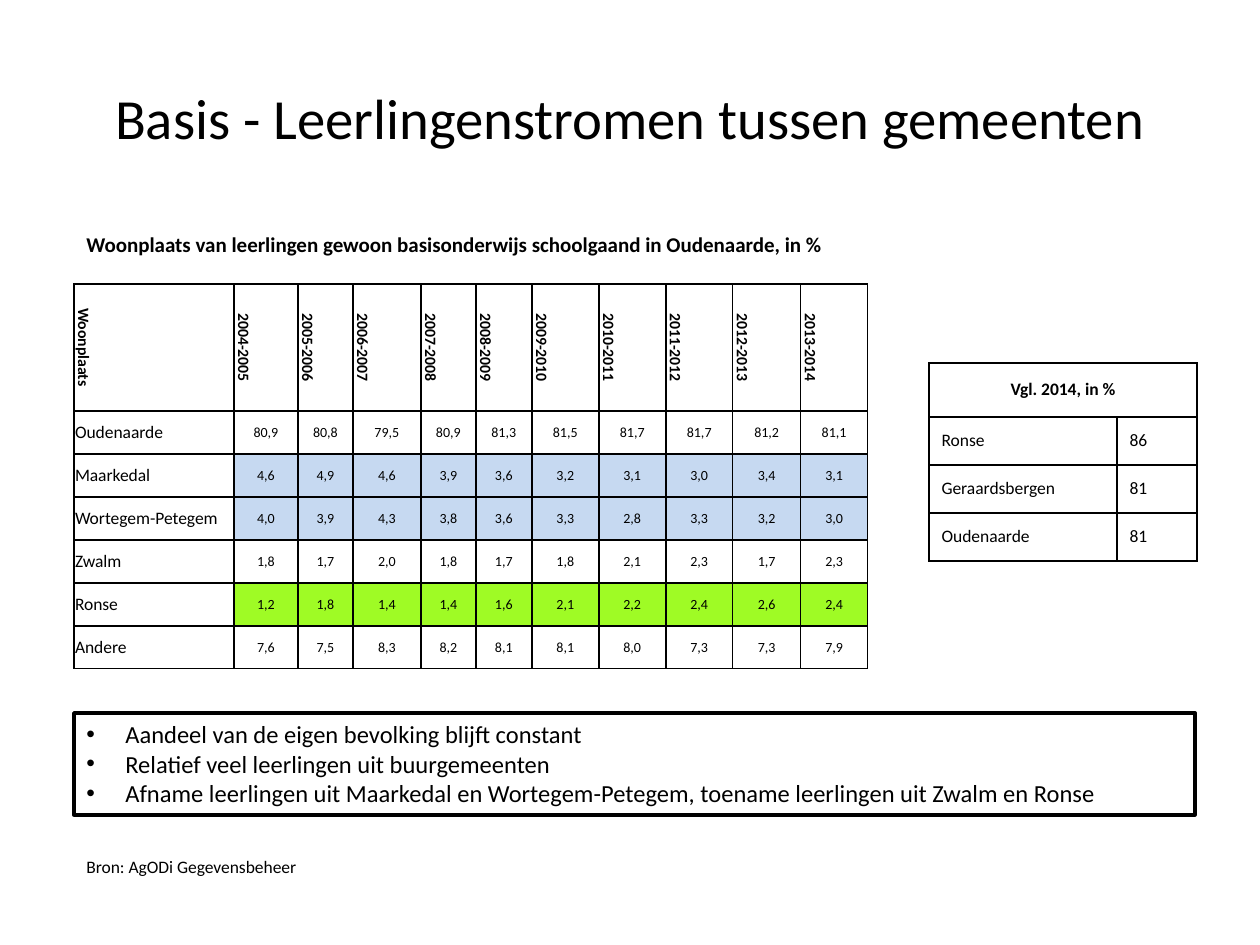
from lxml import etree
from pptx import Presentation
from pptx.dml.color import RGBColor
from pptx.enum.shapes import MSO_SHAPE
from pptx.enum.text import MSO_ANCHOR, PP_ALIGN
from pptx.oxml.ns import qn
from pptx.util import Pt

SCALE = 914400 / 126
LEFT, MID = PP_ALIGN.LEFT, PP_ALIGN.CENTER
CENTRE, TOP = MSO_ANCHOR.MIDDLE, MSO_ANCHOR.TOP
RECT = MSO_SHAPE.RECTANGLE
HEX = {"ink": "000000", "paper": "FFFFFF", "blue": "C6D9F1", "green": "9FFB25"}

YEARS = [f"{year}-{year + 1}" for year in range(2004, 2014)]
SHARES = [
    ("Oudenaarde", "80,9 80,8 79,5 80,9 81,3 81,5 81,7 81,7 81,2 81,1", "paper"),
    ("Maarkedal", "4,6 4,9 4,6 3,9 3,6 3,2 3,1 3,0 3,4 3,1", "blue"),
    ("Wortegem-Petegem", "4,0 3,9 4,3 3,8 3,6 3,3 2,8 3,3 3,2 3,0", "blue"),
    ("Zwalm", "1,8 1,7 2,0 1,8 1,7 1,8 2,1 2,3 1,7 2,3", "paper"),
    ("Ronse", "1,2 1,8 1,4 1,4 1,6 2,1 2,2 2,4 2,6 2,4", "green"),
    ("Andere", "7,6 7,5 8,3 8,2 8,1 8,1 8,0 7,3 7,3 7,9", "paper"),
]
TOWNS = [("Ronse", "86"), ("Geraardsbergen", "81"), ("Oudenaarde", "81")]
POINTS = [
    "Aandeel van de eigen bevolking blijft constant",
    "Relatief veel leerlingen uit buurgemeenten",
    "Afname leerlingen uit Maarkedal en Wortegem-Petegem, "
    "toename leerlingen uit Zwalm en Ronse",
]


def px(num):
    return round(num * SCALE)


def tint(name):
    return RGBColor.from_string(HEX[name])


class Page:
    """Holds the text style and the current slide."""

    def __init__(self, slide, font="Calibri"):
        self.slide = slide
        self.font = font

    def add_text(self, para, text, size, bold=False, align=LEFT):
        para.alignment = align
        run = para.add_run()
        run.text = text
        run.font.name = self.font
        run.font.size = Pt(size)
        run.font.bold = bold
        run.font.color.rgb = tint("ink")

    def title(self, text, box, size):
        shape = self.slide.shapes.title
        shape.left, shape.top, shape.width, shape.height = map(px, box)
        shape.text_frame.vertical_anchor = CENTRE
        self.add_text(shape.text_frame.paragraphs[0], text, size, align=MID)

    def label(self, text, box, size, bold=False):
        frame = self.slide.shapes.add_textbox(*map(px, box)).text_frame
        frame.word_wrap = False
        self.add_text(frame.paragraphs[0], text, size, bold)

    def panel(self, lines, box, size, indent):
        """Draw a framed list with bullets."""
        shape = self.slide.shapes.add_shape(RECT, *map(px, box))
        shape.shadow.inherit = False
        shape.fill.solid()
        shape.fill.fore_color.rgb = tint("paper")
        shape.line.color.rgb = tint("ink")
        shape.line.width = Pt(2)
        frame = shape.text_frame
        frame.word_wrap = True
        frame.vertical_anchor = TOP
        for num, line in enumerate(lines):
            para = frame.add_paragraph() if num else frame.paragraphs[0]
            self.add_text(para, line, size)
            props = para._p.get_or_add_pPr()
            props.set("marL", str(px(indent)))
            props.set("indent", str(-px(indent)))
            etree.SubElement(props, qn("a:buFont"), typeface="Arial")
            etree.SubElement(props, qn("a:buChar"), char="•")

    def grid(self, spot, cols, rows):
        box = *spot, sum(cols), sum(rows)
        frame = self.slide.shapes.add_table(len(rows), len(cols), *map(px, box))
        table = frame.table
        table.first_row = table.horz_banding = False
        for col, width in zip(table.columns, cols):
            col.width = px(width)
        for row, height in zip(table.rows, rows):
            row.height = px(height)
        for cell in table.iter_cells():
            self.edge(cell)
            self.shade(cell, "paper")
            cell.vertical_anchor = CENTRE
        return table

    def edge(self, cell):
        props = cell._tc.get_or_add_tcPr()
        for side in ("lnL", "lnR", "lnT", "lnB"):
            line = etree.SubElement(props, qn(f"a:{side}"), w=str(Pt(1)))
            fill = etree.SubElement(line, qn("a:solidFill"))
            etree.SubElement(fill, qn("a:srgbClr"), val=HEX["ink"])

    def shade(self, cell, name):
        cell.fill.solid()
        cell.fill.fore_color.rgb = tint(name)

    def fill(self, cell, text, size, bold=False, align=LEFT):
        self.add_text(cell.text_frame.paragraphs[0], text, size, bold, align)


def flows(page):
    """Add the table of shares by home town and school year."""
    cols = [160, 64, 55, 68, 55, 56, 67, 67, 67, 68, 67]
    table = page.grid((74, 284), cols, [127] + [43] * len(SHARES))
    for cell in table.iter_cells():
        cell.margin_left = cell.margin_right = cell.margin_top = px(1)
        cell.margin_bottom = 0
    for col, text in enumerate(["Woonplaats"] + YEARS):
        cell = table.cell(0, col)
        cell._tc.get_or_add_tcPr().set("vert", "vert")
        page.fill(cell, text, 9, True, MID)
    for row, (town, shares, name) in enumerate(SHARES, 1):
        page.fill(table.cell(row, 0), town, 10)
        for col, share in enumerate(shares.split(), 1):
            cell = table.cell(row, col)
            page.shade(cell, name)
            page.fill(cell, share, 8, align=MID)


def peers(page):
    """Add the table that compares three towns."""
    table = page.grid((929, 363), [188, 80], [54] + [48] * len(TOWNS))
    head = table.cell(0, 0)
    head.merge(table.cell(0, 1))
    page.fill(head, "Vgl. 2014, in %", 10, True, MID)
    for row, pair in enumerate(TOWNS, 1):
        for col, text in enumerate(pair):
            page.fill(table.cell(row, col), text, 10)


def main():
    deck = Presentation()
    deck.slide_width, deck.slide_height = px(1260), px(945)
    page = Page(deck.slides.add_slide(deck.slide_layouts[5]))
    page.title("Basis - Leerlingenstromen tussen gemeenten", (63, 38, 1134, 158), 32.4)
    flows(page)
    page.label(
        "Woonplaats van leerlingen gewoon basisonderwijs schoolgaand in Oudenaarde, in %",
        (74, 225, 881, 38), 12, True)
    page.panel(POINTS, (74, 713, 1121, 102), 14, 39)
    page.label("Bron: AgODi Gegevensbeheer", (74, 850, 263, 34), 10)
    peers(page)
    deck.save("out.pptx")


if __name__ == "__main__":
    main()
